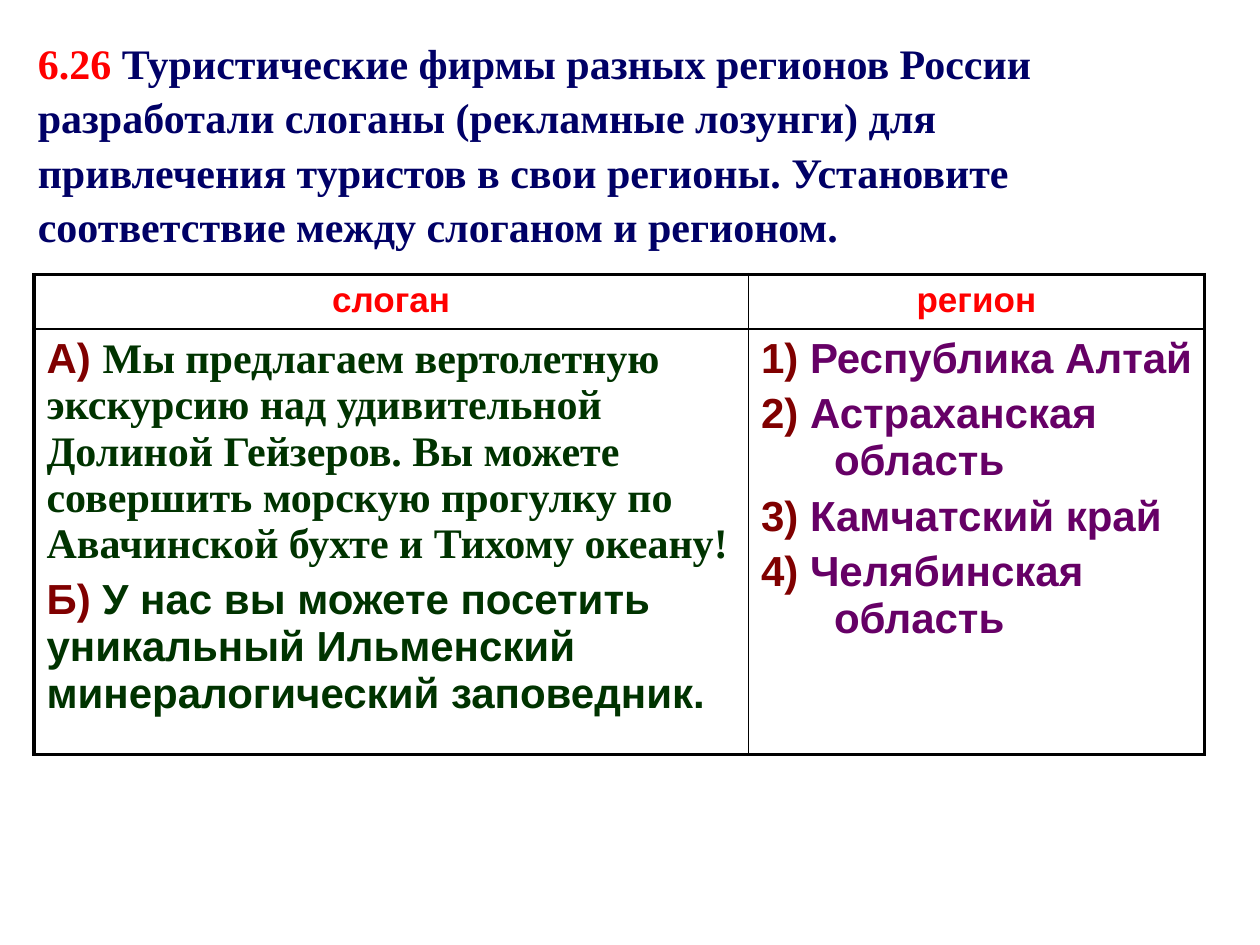
import pptx
import pptx.dml.color
import pptx.enum.text
import pptx.oxml.ns
import pptx.util
from lxml import etree

SANS, SERIF = "Arial", "Times New Roman"
RED, NAVY, MAROON, GREEN, PURPLE = "FF0000", "000066", "800000", "003300", "660066"
ALIGN = pptx.enum.text.PP_ALIGN
inches = pptx.util.Inches

TASK = [("6.26 ", SERIF, RED),
        ("Туристические фирмы разных регионов России разработали слоганы "
         "(рекламные лозунги) для привлечения туристов в свои регионы. "
         "Установите соответствие между слоганом и регионом.", SERIF, NAVY)]
HEADINGS = ["слоган", "регион"]
SLOGANS = [
    [("А) ", SANS, MAROON),
     ("Мы предлагаем вертолетную экскурсию над удивительной Долиной Гейзеров. "
      "Вы можете совершить морскую прогулку по Авачинской бухте и Тихому океану!",
      SERIF, GREEN)],
    [("Б) ", SANS, MAROON), ("У нас вы можете посетить", SANS, GREEN)],
    [("уникальный Ильменский", SANS, GREEN)],
    [("минералогический заповедник.", SANS, GREEN)],
]
REGIONS = ["Республика Алтай", "Астраханская область", "Камчатский край",
           "Челябинская область"]
COLUMNS, ROWS = [5.67, 3.62], [0.43, 3.38]
OUTER, INNER = 2.25, 1


def color(hex_value):
    return pptx.dml.color.RGBColor.from_string(hex_value)


def write_runs(paragraph, parts, size=24):
    """Fill a paragraph with bold (text, font, colour) parts."""
    for text, face, hex_value in parts:
        run = paragraph.add_run()
        run.text = text
        run.font.name = face
        run.font.size = pptx.util.Pt(size)
        run.font.bold = True
        run.font.color.rgb = color(hex_value)


def write_cell(cell, lines, size=24, align=ALIGN.LEFT, hanging=0, spaced=()):
    """Write one paragraph per line, with a gap above those listed in spaced."""
    frame = cell.text_frame
    for index, parts in enumerate(lines):
        paragraph = frame.add_paragraph() if index else frame.paragraphs[0]
        paragraph.alignment = align
        if index in spaced:
            paragraph.space_before = pptx.util.Pt(5)
        if hanging:
            properties = paragraph._p.get_or_add_pPr()
            properties.set("marL", str(inches(hanging)))
            properties.set("indent", str(-inches(hanging)))
        write_runs(paragraph, parts, size)


def draw_borders(cell, row, column):
    """Thick lines around the table, thin lines between its cells."""
    on_edge = {"lnL": column == 0, "lnR": column == len(COLUMNS) - 1,
               "lnT": row == 0, "lnB": row == len(ROWS) - 1}
    properties = cell._tc.get_or_add_tcPr()
    qn = pptx.oxml.ns.qn
    for position, (side, outer) in enumerate(on_edge.items()):
        line = etree.Element(qn("a:" + side))
        line.set("w", str(pptx.util.Pt(OUTER if outer else INNER)))
        fill = etree.SubElement(line, qn("a:solidFill"))
        etree.SubElement(fill, qn("a:srgbClr")).set("val", "000000")
        properties.insert(position, line)


def add_task(slide):
    title = slide.shapes.title
    title.left, title.top = inches(0.2), inches(0.28)
    title.width, title.height = inches(9.37), inches(1.7)
    frame = title.text_frame
    frame.word_wrap = True
    frame.auto_size = pptx.enum.text.MSO_AUTO_SIZE.NONE
    frame.vertical_anchor = pptx.enum.text.MSO_ANCHOR.MIDDLE
    frame.margin_right = inches(0.15)
    paragraph = frame.paragraphs[0]
    paragraph.alignment = ALIGN.LEFT
    paragraph.line_spacing = 1.08
    write_runs(paragraph, TASK)


def add_matching_table(slide):
    table = slide.shapes.add_table(
        len(ROWS), len(COLUMNS), inches(0.27), inches(2.18),
        inches(sum(COLUMNS)), inches(sum(ROWS))).table
    table.first_row = table.horz_banding = False
    for column, width in zip(table.columns, COLUMNS):
        column.width = inches(width)
    for row, height in zip(table.rows, ROWS):
        row.height = inches(height)
    for row in range(len(ROWS)):
        for column in range(len(COLUMNS)):
            cell = table.cell(row, column)
            cell.fill.background()
            cell.margin_right = inches(0.1 if row == 0 else 0.05)
            draw_borders(cell, row, column)
    for column, heading in enumerate(HEADINGS):
        write_cell(table.cell(0, column), [[(heading, SANS, RED)]], 20, ALIGN.CENTER)
    write_cell(table.cell(1, 0), SLOGANS, spaced=[1])
    regions = [[(f"{number})", SANS, MAROON), (f" {region}", SANS, PURPLE)]
               for number, region in enumerate(REGIONS, 1)]
    write_cell(table.cell(1, 1), regions, hanging=0.58,
               spaced=range(1, len(regions)))


def main():
    deck = pptx.Presentation()
    deck.slide_width, deck.slide_height = inches(10), inches(7.5)
    slide = deck.slides.add_slide(deck.slide_layouts.get_by_name("Title Only"))
    add_task(slide)
    add_matching_table(slide)
    deck.save("out.pptx")


if __name__ == "__main__":
    main()
